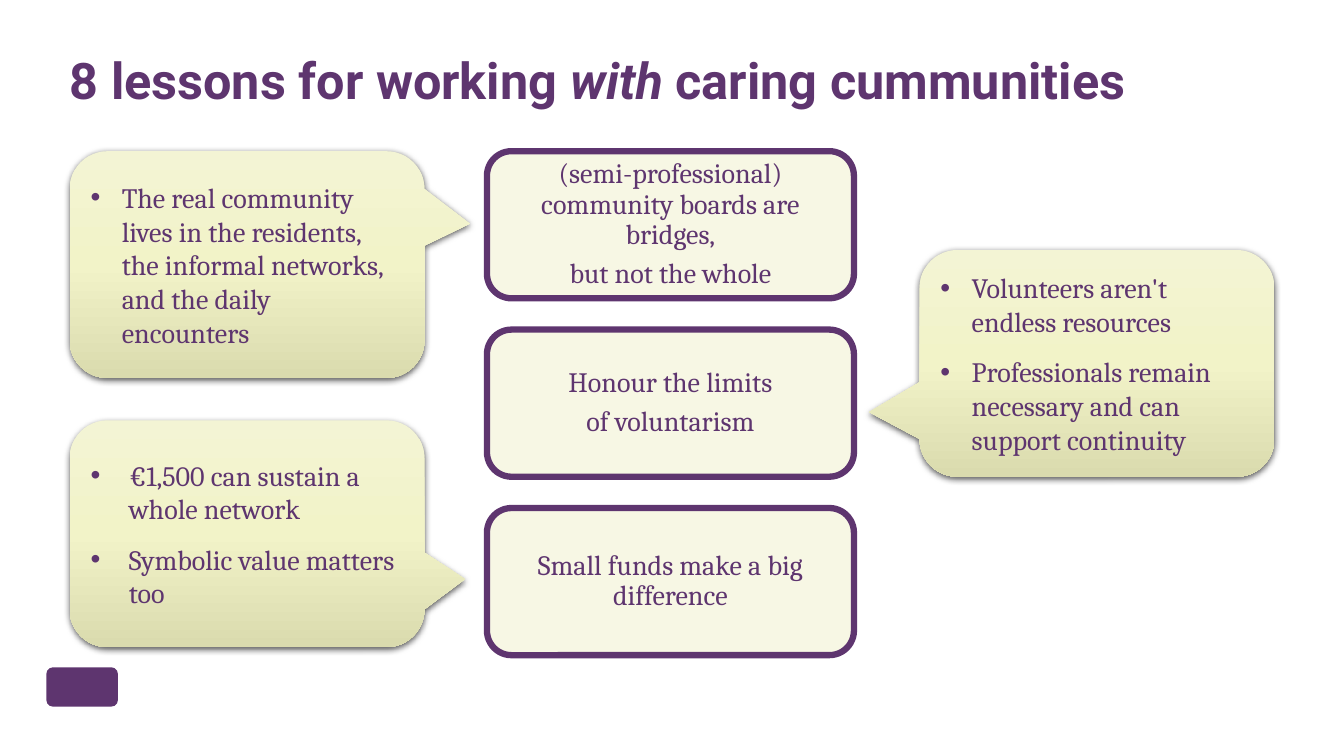
from copy import deepcopy

from lxml import etree
from pptx import Presentation
from pptx import util as u
from pptx.dml.color import RGBColor
from pptx.enum import shapes, text
from pptx.oxml.ns import qn

PURPLE, CREAM = "5E356F", "F0F1CA"
GRADIENT = [(0, "F3F4D4"), (0.5, "F2F3C8"), (1, "DADBAE")]
LEFT = 0.69
BOARD_X, BOARD_Y, BOARD_W, BOARD_H, BOARD_STEP = 4.83, 1.5, 3.64, 1.46, 1.77
CALLOUT_W, CALLOUT_H = 3.52, 2.25

LESSONS = [
    ["(semi-professional) community boards are bridges,", "but not the whole"],
    ["Honour the limits", "of voluntarism"],
    ["Small funds make a big difference"],
]
# left, top, pointer tip (x, y), bullet indent, bullets
CALLOUTS = [
    (LEFT, 1.5, (0.628, -0.18), 0.31,
     ["The real community lives in the residents, the informal networks, "
      "and the daily encounters"]),
    (9.12, 2.48, (-0.642, 0.215), 0.31,
     ["Volunteers aren't endless resources",
      "Professionals remain necessary and can support continuity"]),
    (LEFT, 4.17, (0.614, 0.2), 0.38,
     ["€1,500 can sustain a whole network", "Symbolic value matters too"]),
]


def rgb(value):
    return RGBColor.from_string(value)


def add_child(parent, tag, **attrs):
    return etree.SubElement(parent, qn(tag), attrs)


def add_box(s, kind, x, y, w, h):
    sp = s.shapes.add_shape(kind, *map(u.Inches, (x, y, w, h)))
    sp.shadow.inherit = False
    return sp


def write(sp, lines, align, gap, line_spacing=1.0, indent=None):
    tf = sp.text_frame
    tf.word_wrap = True
    tf.vertical_anchor = text.MSO_ANCHOR.MIDDLE
    for i, line in enumerate(lines):
        p = tf.add_paragraph() if i else tf.paragraphs[0]
        p.text = line
        p.alignment = align
        p.line_spacing = line_spacing
        if i:
            p.space_before = u.Pt(gap)
        if indent:
            pPr = p._p.get_or_add_pPr()
            pPr.set("marL", str(u.Inches(indent)))
            pPr.set("indent", str(-u.Inches(indent)))
            add_child(pPr, "a:buFont", typeface="Arial")
            add_child(pPr, "a:buChar", char="•")
        p.font.name, p.font.size = "Cambria", u.Pt(20)
        p.font.color.rgb = rgb(PURPLE)


def add_title(s):
    title = s.shapes.title
    title.left, title.top = u.Inches(LEFT), u.Inches(0.49)
    title.width, title.height = u.Inches(11.88), u.Inches(1.38)
    tf = title.text_frame
    tf.margin_left = tf.margin_right = tf.margin_top = tf.margin_bottom = 0
    tf.vertical_anchor = text.MSO_ANCHOR.TOP
    p = tf.paragraphs[0]
    p.alignment = text.PP_ALIGN.LEFT
    for words, italic in [("8 lessons for working ", False), ("with", True),
                          (" caring cummunities", False)]:
        r = p.add_run()
        r.text = words
        r.font.italic = italic
    p.font.name, p.font.size, p.font.bold = "Roboto", u.Pt(36), True
    p.font.color.rgb = rgb(PURPLE)


def add_lesson(s, x, y, lines):
    sp = add_box(s, shapes.MSO_SHAPE.ROUNDED_RECTANGLE, x, y, BOARD_W, BOARD_H)
    sp.fill.solid()
    sp.fill.fore_color.rgb = rgb(CREAM)
    color = sp._element.spPr.find(qn("a:solidFill"))[0]
    add_child(color, "a:alpha", val="50000")
    sp.line.color.rgb = rgb(PURPLE)
    sp.line.width = u.Pt(4.5)
    tf = sp.text_frame
    tf.margin_left = tf.margin_right = u.Inches(0.07)
    tf.margin_top = tf.margin_bottom = u.Inches(0.07)
    write(sp, lines, text.PP_ALIGN.CENTER, 6.5, line_spacing=0.9)


def add_callout(s, x, y, tip, indent, bullets):
    sp = add_box(s, shapes.MSO_SHAPE.ROUNDED_RECTANGULAR_CALLOUT,
                 x, y, CALLOUT_W, CALLOUT_H)
    sp.adjustments[0], sp.adjustments[1] = tip
    sp.line.fill.background()

    # Vertical three-stop gradient
    sp.fill.gradient()
    sp.fill.gradient_angle = 270
    stops = sp._element.spPr.find(qn("a:gradFill")).find(qn("a:gsLst"))
    stops.append(deepcopy(stops[0]))
    for stop, (position, color) in zip(sp.fill.gradient_stops, GRADIENT):
        stop.position = position
        stop.color.rgb = rgb(color)

    # Soft shadow below
    effects = sp._element.spPr.find(qn("a:effectLst"))
    shadow = add_child(effects, "a:outerShdw", blurRad=str(u.Pt(4.5)),
                       dist=str(u.Pt(1.5)), dir="5400000", rotWithShape="0")
    color = add_child(shadow, "a:srgbClr", val="000000")
    add_child(color, "a:alpha", val="63000")

    write(sp, bullets, text.PP_ALIGN.LEFT, 12, indent=indent)


def add_logo_mark(s, x, y, w, h):
    sp = add_box(s, shapes.MSO_SHAPE.ROUNDED_RECTANGLE, x, y, w, h)
    sp.fill.solid()
    sp.fill.fore_color.rgb = rgb(PURPLE)
    sp.line.fill.background()


def main():
    prs = Presentation()
    prs.slide_width, prs.slide_height = u.Inches(13.33), u.Inches(7.5)
    s = prs.slides.add_slide(prs.slide_layouts[5])
    add_logo_mark(s, 0.46, 6.62, 0.71, 0.39)
    add_title(s)
    for i, lines in enumerate(LESSONS):
        add_lesson(s, BOARD_X, BOARD_Y + i * BOARD_STEP, lines)
    for callout in CALLOUTS:
        add_callout(s, *callout)
    prs.save("out.pptx")


if __name__ == "__main__":
    main()
